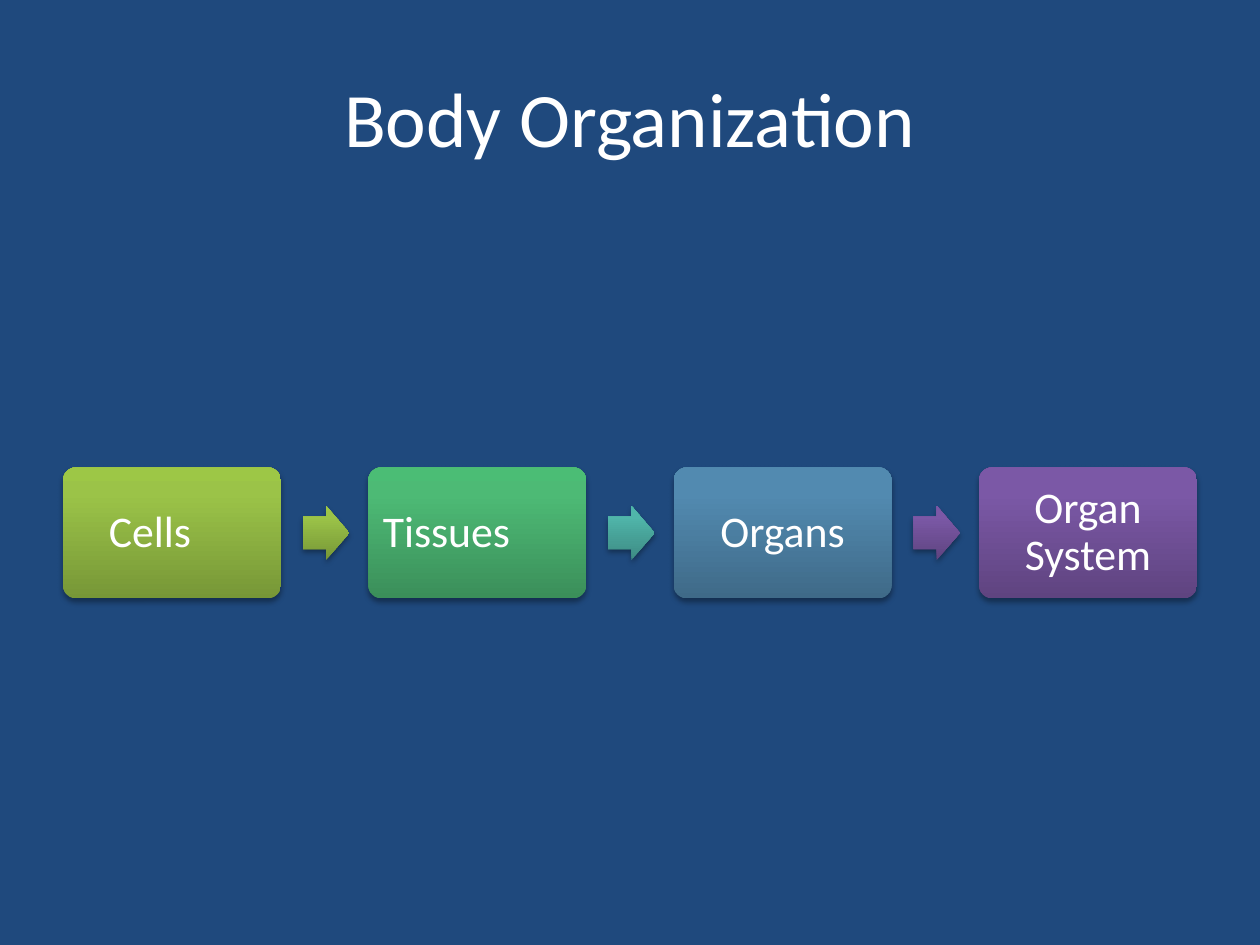
"""Build the Body Organization slide: four boxes joined by block arrows."""
from copy import deepcopy

from lxml.etree import fromstring
from pptx import Presentation
from pptx.dml.color import RGBColor as RGB
from pptx.enum.shapes import MSO_SHAPE as SHAPE
from pptx.enum.text import MSO_ANCHOR as ANCHOR, PP_ALIGN as ALIGN
from pptx.oxml.ns import qn
from pptx.util import Inches, Pt

NAVY = RGB(0x1F, 0x49, 0x7D)
WHITE = RGB(0xFF, 0xFF, 0xFF)
GREEN = RGB(0x77, 0x97, 0x37), RGB(0x9B, 0xC3, 0x48), RGB(0x9D, 0xC7, 0x46)
EMERALD = RGB(0x3B, 0x8F, 0x5A), RGB(0x4D, 0xBA, 0x75), RGB(0x4B, 0xBD, 0x75)
TEAL = RGB(0x3D, 0x8B, 0x83), RGB(0x50, 0xB5, 0xAA), RGB(0x4E, 0xB8, 0xAC)
BLUE = RGB(0x3F, 0x6A, 0x88), RGB(0x52, 0x8A, 0xB0), RGB(0x51, 0x8B, 0xB3)
PURPLE = RGB(0x5F, 0x44, 0x80), RGB(0x7B, 0x58, 0xA6), RGB(0x7C, 0x57, 0xA8)
SHADOW = (
    '<a:outerShdw xmlns:a="http://schemas.openxmlformats.org/drawingml/2006/main" '
    'blurRad="40000" dist="23000" dir="5400000" rotWithShape="0">'
    '<a:srgbClr val="000000"><a:alpha val="35000"/></a:srgbClr></a:outerShdw>'
)
STEPS = [
    ("Cells\t", GREEN, GREEN),
    ("Tissues\t", EMERALD, TEAL),
    ("Organs", BLUE, PURPLE),
    ("Organ System", PURPLE, None),
]
MARGIN, WIDTH = 0.5, 9
BOX_W, BOX_H = 1.73, 1.04
ARROW_W, ARROW_H = 0.37, 0.43
PITCH = (WIDTH - BOX_W) / (len(STEPS) - 1)
MIDDLE = 4.23


def add_block(shapes, kind, left, width, height, colors, adjustments):
    sp = shapes.add_shape(kind, Inches(left), Inches(MIDDLE - height / 2),
                          Inches(width), Inches(height))
    for i, value in enumerate(adjustments):
        sp.adjustments[i] = value
    sp.fill.gradient()
    sp.fill.gradient_angle = 90
    stops = sp._element.spPr.find(".//" + qn("a:gsLst"))
    stops.insert(1, deepcopy(stops[0]))
    for stop, position, color in zip(sp.fill.gradient_stops, (0, 0.8, 1), colors):
        stop.position = position
        stop.color.rgb = color
    sp.line.fill.background()
    sp.shadow.inherit = False
    sp._element.spPr.find(qn("a:effectLst")).append(fromstring(SHADOW))
    return sp


prs = Presentation()
prs.slide_width, prs.slide_height = Inches(10), Inches(7.5)
s = prs.slides.add_slide(prs.slide_layouts[5])
s.background.fill.solid()
s.background.fill.fore_color.rgb = NAVY

title = s.shapes.title
title.left, title.top = Inches(MARGIN), Inches(0.3)
title.width, title.height = Inches(WIDTH), Inches(1.25)
title.text_frame.vertical_anchor = ANCHOR.MIDDLE
p = title.text_frame.paragraphs[0]
p.text = "Body Organization"
p.alignment = ALIGN.CENTER
p.font.size, p.font.name = Pt(44), "Calibri"
p.font.color.rgb = WHITE

for col, (label, box_colors, arrow_colors) in enumerate(STEPS):
    left = MARGIN + col * PITCH
    sp = add_block(s.shapes, SHAPE.ROUNDED_RECTANGLE, left, BOX_W, BOX_H,
                   box_colors, [0.1])
    tf = sp.text_frame
    tf.word_wrap = True
    tf.vertical_anchor = ANCHOR.MIDDLE
    tf.margin_left = tf.margin_right = tf.margin_top = tf.margin_bottom = Inches(0.07)
    p = tf.paragraphs[0]
    p.text = label
    p.alignment = ALIGN.CENTER
    p.line_spacing = 0.9
    p.font.size, p.font.name = Pt(25), "Calibri"
    p.font.color.rgb = WHITE
    if arrow_colors:
        add_block(s.shapes, SHAPE.RIGHT_ARROW, left + 1.1 * BOX_W, ARROW_W, ARROW_H,
                  arrow_colors, [0.6, 0.5])

prs.save("out.pptx")
